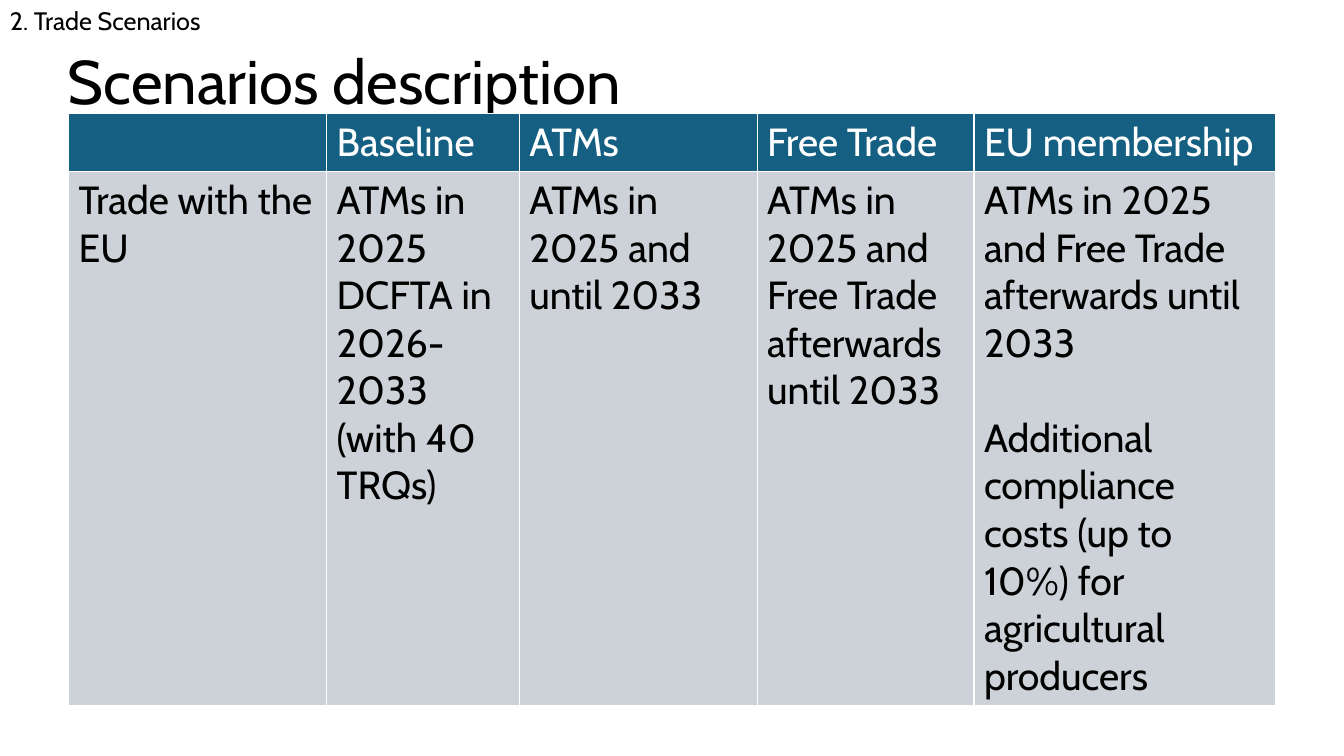
import pptx
import pptx.util
import pptx.dml.color
import pptx.enum.text
import pptx.oxml
import pptx.oxml.ns

Inches, Pt = pptx.util.Inches, pptx.util.Pt

SECTION = "2. Trade Scenarios"
TITLE = "Scenarios description"
ROWS = [
    ["", "Baseline", "ATMs", "Free Trade", "EU membership"],
    [
        "Trade with the EU",
        "ATMs in 2025\nDCFTA in 2026-2033 (with 40 TRQs)",
        "ATMs in 2025 and until 2033",
        "ATMs in 2025 and Free Trade afterwards until 2033",
        "ATMs in 2025 and Free Trade afterwards until 2033\n"
        "Additional compliance costs (up to 10%) for agricultural producers",
    ],
]
COL_WIDTHS = [2.56, 1.91, 2.36, 2.15, 2.99]
ROW_HEIGHTS = [0.57, 4.82]
FONT = "Cabin"
COLORS = {"text": "000000", "header": "156082", "body": "CCD2D8", "white": "FFFFFF"}


def rgb(name):
    return pptx.dml.color.RGBColor.from_string(COLORS[name])


def format_text(tf, size, color):
    for p in tf.paragraphs:
        for r in p.runs:
            r.font.name = FONT
            r.font.size = Pt(size)
            r.font.bold = False
            r.font.color.rgb = rgb(color)


def add_borders(cell):
    tcPr = cell._tc.get_or_add_tcPr()
    for i, side in enumerate(["lnL", "lnR", "lnT", "lnB"]):
        tcPr.insert(i, pptx.oxml.parse_xml(
            f'<a:{side} {pptx.oxml.ns.nsdecls("a")} w="{Pt(1)}"><a:solidFill>'
            f'<a:srgbClr val="{COLORS["white"]}"/></a:solidFill></a:{side}>'))


prs = pptx.Presentation()
prs.slide_width, prs.slide_height = Inches(13.33), Inches(7.5)
s = prs.slides.add_slide(prs.slide_layouts[5])

# Title
title = s.shapes.title
title.left, title.top = Inches(0.57), Inches(0.4)
title.width, title.height = Inches(11.49), Inches(0.82)
tf = title.text_frame
tf.text = TITLE
tf.auto_size = pptx.enum.text.MSO_AUTO_SIZE.NONE
tf.vertical_anchor = pptx.enum.text.MSO_ANCHOR.BOTTOM
tf.paragraphs[0].alignment = pptx.enum.text.PP_ALIGN.LEFT
tf.paragraphs[0].line_spacing = 0.9
format_text(tf, 44, "text")

# Scenario table
table = s.shapes.add_table(
    len(ROWS), len(COL_WIDTHS), Inches(0.68), Inches(1.13),
    Inches(sum(COL_WIDTHS)), Inches(sum(ROW_HEIGHTS))).table
for column, width in zip(table.columns, COL_WIDTHS):
    column.width = Inches(width)
for i, (texts, height) in enumerate(zip(ROWS, ROW_HEIGHTS)):
    table.rows[i].height = Inches(height)
    fill, color = ("header", "white") if i == 0 else ("body", "text")
    for j, text in enumerate(texts):
        cell = table.cell(i, j)
        cell.text_frame.text = text
        format_text(cell.text_frame, 28, color)
        cell.fill.solid()
        cell.fill.fore_color.rgb = rgb(fill)
        add_borders(cell)

# One line of space above the compliance costs
table.cell(1, 4).text_frame.paragraphs[1].space_before = Pt(34)

# Section label
label = s.shapes.add_textbox(0, 0, Inches(6.66), Inches(0.4))
tf = label.text_frame
tf.word_wrap = True
tf.text = SECTION
format_text(tf, 18, "text")

prs.save("out.pptx")
